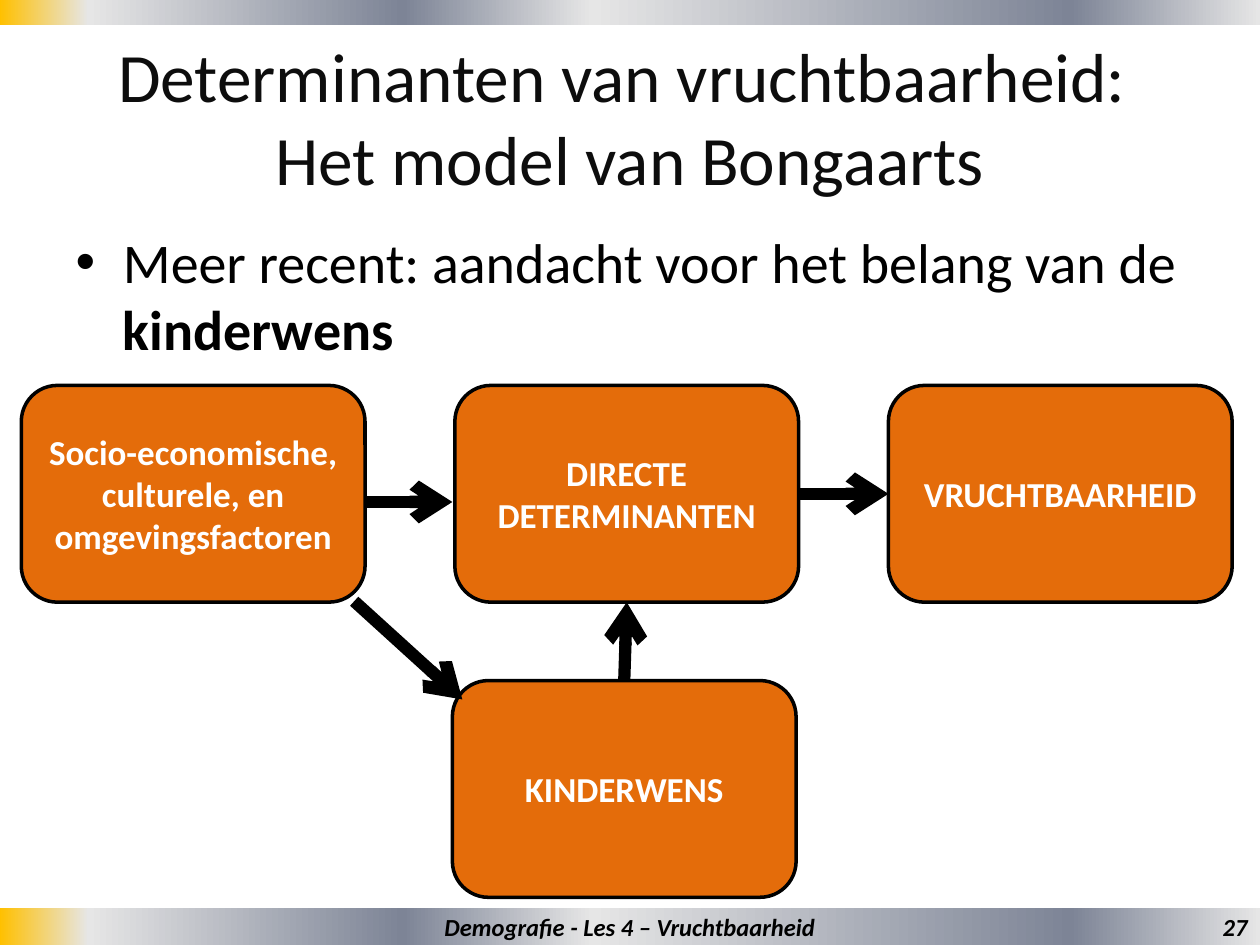
from lxml import etree
from pptx import Presentation
from pptx.dml.color import RGBColor
from pptx.enum import shapes, text
from pptx.oxml import ns
from pptx.util import Cm, Pt

FONT = "Calibri"
COLORS = {"box": "E46C0A", "ink": "000000", "title": "0D0D0D", "light": "FFFFFF"}
BAND_STOPS = [(0, "FFC000"), (7, "E6E6E6"), (32, "7D8496"),
              (47, "E6E6E6"), (85, "7D8496"), (100, "E6E6E6")]

TITLE = "Determinanten van vruchtbaarheid: \vHet model van Bongaarts"
BULLET = [("Meer recent: aandacht voor het belang van de ", False), ("kinderwens", True)]
FOOTER = "Demografie - Les 4 – Vruchtbaarheid"
PAGE = "27"

WIDTH, HEIGHT = 25.4, 19.05
HEADER_H, FOOTER_H = 0.51, 0.74
BOX_W, BOX_H = 6.93, 4.37
LEFT, PITCH, TOP = 0.43, 8.74, 7.77
BOXES = {
    "factors": ("Socio-economische, culturele, en omgevingsfactoren", LEFT, TOP),
    "direct": ("DIRECTE DETERMINANTEN", LEFT + PITCH, TOP),
    "fertility": ("VRUCHTBAARHEID", LEFT + 2 * PITCH, TOP),
    "desire": ("KINDERWENS", 9.12, 13.72),
}
JOINED_ARROWS = [("direct", 3, "fertility", 1), ("desire", 0, "direct", 2)]
FREE_ARROWS = [(7.35, 10.12, 9.12, 10.12), (7.14, 12.12, 9.32, 14.1)]


def rgb(name):
    return RGBColor.from_string(COLORS[name])


def style(paragraph, size, color, align=None, bold=None, italic=None):
    font = paragraph.font
    font.name, font.size, font.bold, font.italic = FONT, Pt(size), bold, italic
    font.color.rgb = rgb(color)
    paragraph.alignment = align


def place(shape, left, top, width, height):
    shape.left, shape.top, shape.width, shape.height = map(Cm, (left, top, width, height))


def add_band(slide, top, height):
    band = slide.shapes.add_shape(
        shapes.MSO_SHAPE.RECTANGLE, Cm(0), Cm(top), Cm(WIDTH), Cm(height))
    band.shadow.inherit = False
    band.line.fill.background()
    band.fill.gradient()
    band.fill.gradient_angle = 0
    stops = band._element.spPr.find(".//" + ns.qn("a:gsLst"))
    for stop in list(stops):
        stops.remove(stop)
    for percent, color in BAND_STOPS:
        stop = etree.SubElement(stops, ns.qn("a:gs"), pos=str(percent * 1000))
        etree.SubElement(stop, ns.qn("a:srgbClr"), val=color)
    return band


def write_centred(shape, words, size, color, italic=None):
    frame = shape.text_frame
    frame.word_wrap = True
    frame.vertical_anchor = text.MSO_ANCHOR.MIDDLE
    frame.text = words
    style(frame.paragraphs[0], size, color, text.PP_ALIGN.CENTER, True, italic)


def add_box(slide, words, left, top):
    box = slide.shapes.add_shape(
        shapes.MSO_SHAPE.ROUNDED_RECTANGLE, Cm(left), Cm(top), Cm(BOX_W), Cm(BOX_H))
    box.shadow.inherit = False
    box.fill.solid()
    box.fill.fore_color.rgb = rgb("box")
    box.line.color.rgb = rgb("ink")
    box.line.width = Pt(2)
    write_centred(box, words, 20, "light")
    return box


def add_arrow(slide, *ends):
    arrow = slide.shapes.add_connector(shapes.MSO_CONNECTOR.STRAIGHT, *map(Cm, ends))
    arrow.line.color.rgb = rgb("ink")
    arrow.line.width = Pt(7)
    etree.SubElement(arrow.line._get_or_add_ln(), ns.qn("a:tailEnd"), type="arrow")
    etree.SubElement(arrow._element.spPr, ns.qn("a:effectLst"))
    return arrow


def main():
    deck = Presentation()
    deck.slide_width, deck.slide_height = Cm(WIDTH), Cm(HEIGHT)
    slide = deck.slides.add_slide(deck.slide_layouts[1])

    footer_top = HEIGHT - FOOTER_H
    add_band(slide, 0, HEADER_H)
    write_centred(add_band(slide, footer_top, FOOTER_H), FOOTER, 14, "ink", True)
    page = slide.shapes.add_textbox(Cm(18.2), Cm(footer_top), Cm(7.2), Cm(FOOTER_H))
    write_centred(page, PAGE, 14, "ink", True)
    page.text_frame.paragraphs[0].alignment = text.PP_ALIGN.RIGHT

    title, body = slide.shapes.title, slide.placeholders[1]
    place(title, 1.27, 0.76, 22.86, 3.18)
    title.text_frame.auto_size = text.MSO_AUTO_SIZE.NONE
    title.text_frame.text = TITLE
    style(title.text_frame.paragraphs[0], 39.6, "title", text.PP_ALIGN.CENTER)

    place(body, 1.27, 4.45, 22.86, 12.57)
    body.text_frame.auto_size = text.MSO_AUTO_SIZE.NONE
    bullet = body.text_frame.paragraphs[0]
    style(bullet, 32, "ink")
    for words, bold in BULLET:
        run = bullet.add_run()
        run.text = words
        run.font.bold = bold

    boxes = {key: add_box(slide, *box) for key, box in BOXES.items()}
    for start, start_side, end, end_side in JOINED_ARROWS:
        arrow = add_arrow(slide, 0, 0, 0, 0)
        arrow.begin_connect(boxes[start], start_side)
        arrow.end_connect(boxes[end], end_side)
    for ends in FREE_ARROWS:
        add_arrow(slide, *ends)

    deck.save("out.pptx")


if __name__ == "__main__":
    main()
